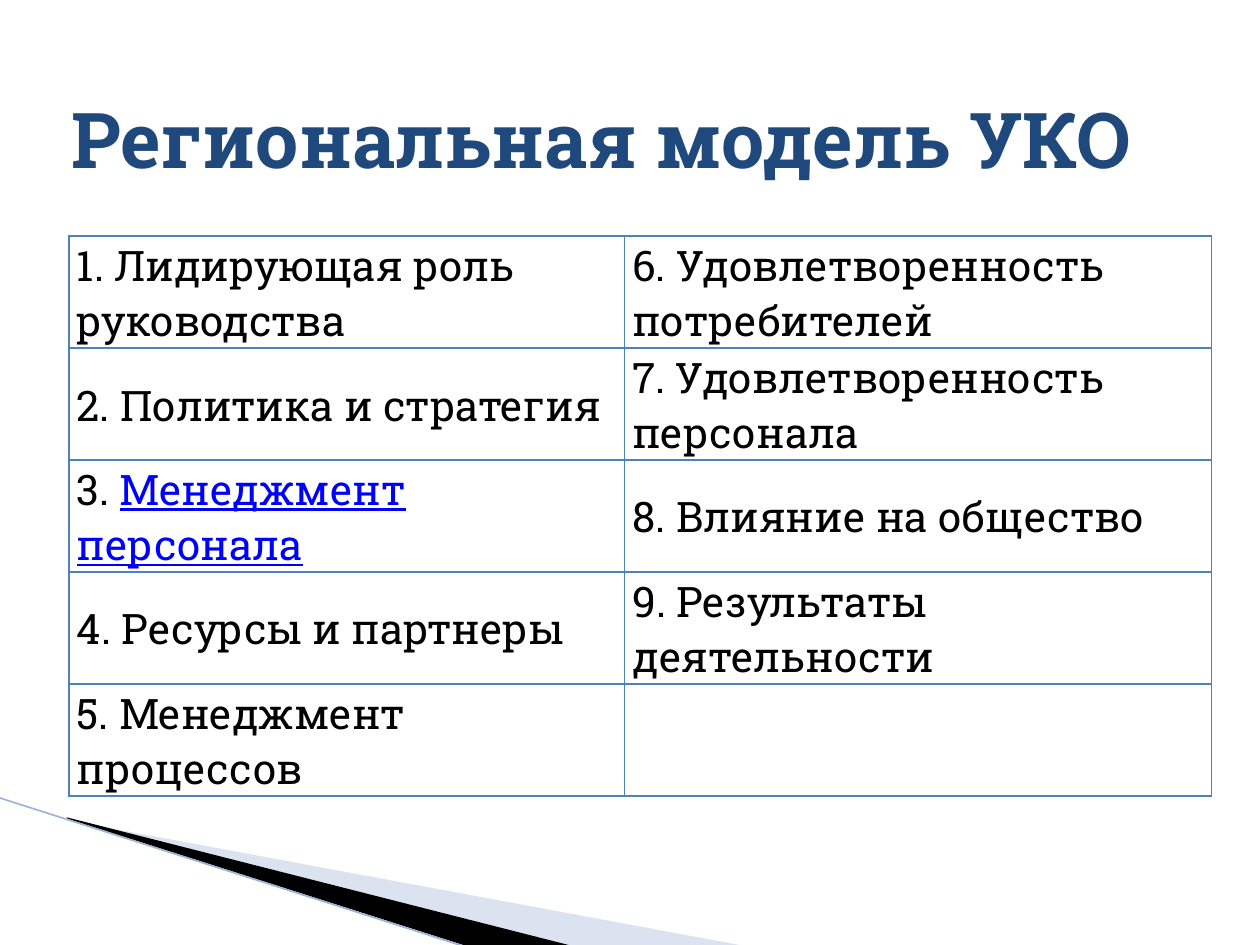
from dataclasses import dataclass
from lxml.etree import SubElement
from pptx import Presentation
from pptx.dml.color import RGBColor
from pptx.enum.shapes import MSO_CONNECTOR
from pptx.enum.text import MSO_ANCHOR
from pptx.oxml.ns import qn
from pptx.util import Pt

FONT = "Roboto Slab"
NAVY = RGBColor(0x1F, 0x49, 0x7D)
BLACK = RGBColor(0x00, 0x00, 0x00)
LINK_BLUE = RGBColor(0x00, 0x00, 0xFF)
BORDER_BLUE = RGBColor(0x4F, 0x81, 0xBD)
PALE_BLUE = RGBColor(0xA7, 0xB9, 0xDB)
LINE_BLUE = RGBColor(0x9E, 0xB3, 0xD6)

COLUMN_WIDTHS = (317.5, 335.5)
ROW_HEIGHT = 64


@dataclass(frozen=True)
class Span:
    text: str
    size: float = 24
    color: RGBColor = BLACK
    bold: bool = False
    underline: bool = False


@dataclass(frozen=True)
class Wedge:
    points: tuple[tuple[float, float], ...]
    color: RGBColor
    opacity: int = 100


WEDGES = (
    Wedge(((39.6, 468.7), (428.4, 540.7), (328.3, 540.7), (39.6, 468)), PALE_BLUE, 40),
    Wedge(((38.2, 467.3), (329, 540.7), (267.8, 541.4), (38.9, 468)), BLACK),
)

ROWS = (
    ((Span("1. Лидирующая роль руководства"),), (Span("6. Удовлетворенность потребителей"),)),
    ((Span("2. Политика и стратегия"),), (Span("7. Удовлетворенность персонала"),)),
    (
        (Span("3. "), Span("Менеджмент персонала", color=LINK_BLUE, underline=True)),
        (Span("8. Влияние на общество"),),
    ),
    ((Span("4. Ресурсы и партнеры"),), (Span("9. Результаты деятельности"),)),
    ((Span("5. Менеджмент процессов"),), ()),
)


def add_spans(para, spans: tuple[Span, ...]) -> None:
    for span in spans:
        run = para.add_run()
        run.text = span.text
        run.font.name = FONT
        run.font.size = Pt(span.size)
        run.font.bold = span.bold
        run.font.underline = span.underline
        run.font.color.rgb = span.color


def add_wedge(page, wedge: Wedge) -> None:
    start, *others = wedge.points
    builder = page.shapes.build_freeform(*start, scale=Pt(1))
    builder.add_line_segments(others, close=True)
    shape = builder.convert_to_shape()
    shape.shadow.inherit = False
    shape.line.fill.background()
    shape.fill.solid()
    shape.fill.fore_color.rgb = wedge.color
    if wedge.opacity < 100:
        color = shape.fill._xPr.find(qn("a:solidFill"))[0]
        SubElement(color, qn("a:alpha"), val=str(wedge.opacity * 1000))


def add_edge_line(page) -> None:
    line = page.shapes.add_connector(
        MSO_CONNECTOR.STRAIGHT, Pt(-0.7), Pt(455.8), Pt(267.1), Pt(541.4)
    )
    line.line.color.rgb = LINE_BLUE
    line.line.width = Pt(0.95)
    SubElement(line._element.spPr, qn("a:effectLst"))


def add_title(page) -> None:
    box = page.shapes.add_textbox(Pt(33.8), Pt(33.8), Pt(658), Pt(90))
    frame = box.text_frame
    frame.word_wrap = True
    frame.vertical_anchor = MSO_ANCHOR.MIDDLE
    add_spans(frame.paragraphs[0], (Span("Региональная модель УКО", 44, NAVY, bold=True),))


def style_cell(cell) -> None:
    cell.vertical_anchor = MSO_ANCHOR.MIDDLE
    cell.margin_left = cell.margin_right = Pt(4.5)
    cell.margin_top, cell.margin_bottom = Pt(0.7), Pt(0)
    properties = cell._tc.get_or_add_tcPr()
    for side in ("lnL", "lnR", "lnT", "lnB"):
        border = SubElement(properties, qn(f"a:{side}"), w=str(Pt(1)))
        fill = SubElement(border, qn("a:solidFill"))
        SubElement(fill, qn("a:srgbClr"), val=str(BORDER_BLUE))
    cell.fill.background()


def add_criteria_table(page) -> None:
    frame = page.shapes.add_table(
        len(ROWS), len(COLUMN_WIDTHS), Pt(39.4), Pt(134.9),
        Pt(sum(COLUMN_WIDTHS)), Pt(ROW_HEIGHT * len(ROWS)),
    )
    table = frame.table
    table.first_row = table.horz_banding = False
    for column, width in zip(table.columns, COLUMN_WIDTHS):
        column.width = Pt(width)
    for row, contents in zip(table.rows, ROWS):
        row.height = Pt(ROW_HEIGHT)
        for cell, spans in zip(row.cells, contents):
            style_cell(cell)
            para = cell.text_frame.paragraphs[0]
            para.space_after = Pt(6)
            add_spans(para, spans)


def main() -> None:
    deck = Presentation()
    deck.slide_width, deck.slide_height = Pt(720), Pt(540)
    page = deck.slides.add_slide(deck.slide_layouts[6])

    # Corner decoration
    for wedge in WEDGES:
        add_wedge(page, wedge)
    add_edge_line(page)

    # Title and table of criteria
    add_title(page)
    add_criteria_table(page)
    deck.save("out.pptx")


if __name__ == "__main__":
    main()
